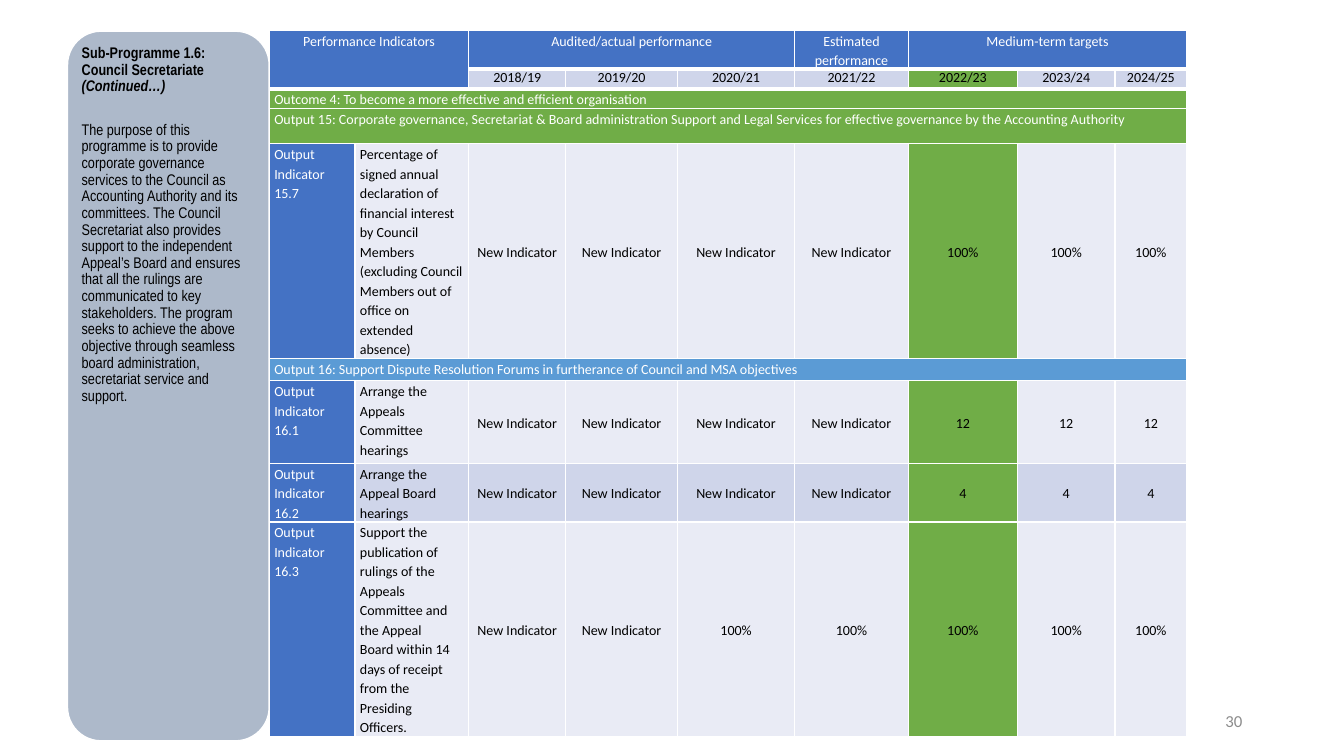
from dataclasses import dataclass

from lxml import etree
from pptx import Presentation
from pptx import util as u
from pptx.dml.color import RGBColor
from pptx.enum import shapes, text
from pptx.oxml.ns import qn

PX = 9144


@dataclass(frozen=True)
class Theme:
    white: str = "FFFFFF"
    black: str = "000000"
    grey: str = "8C8C8C"
    panel: str = "ADB9CA"
    blue: str = "4472C4"
    sky: str = "5B9BD5"
    green: str = "70AD47"
    light: str = "E9EBF5"
    band: str = "CFD5EA"
    table_font: str = "Calibri"
    panel_font: str = "Arial Narrow"
    table_size: int = 10
    panel_size: int = 11
    number_size: int = 12


THEME = Theme()


@dataclass(frozen=True)
class Heading:
    row: int
    column: int
    words: str
    fill: str
    across: int = 1
    down: int = 1
    centred: bool = False


@dataclass(frozen=True)
class Indicator:
    row: int
    number: str
    lines: tuple[str, ...]
    values: tuple[str, ...]
    fill: str = THEME.light


COLUMNS = (85, 113, 96, 111, 116, 113, 108, 97, 71)
ROWS = (35, 16, 17, 35, 109, 22, 82, 54, 72)
YEARS = ("2018/19", "2019/20", "2020/21", "2021/22", "2022/23", "2023/24", "2024/25")
FIRST_YEAR = 2
CURRENT_YEAR = "2022/23"
NEW = "New Indicator"

HEADINGS = (
    Heading(0, 0, "Performance Indicators", THEME.blue, 2, 2, True),
    Heading(0, 2, "Audited/actual performance", THEME.blue, 3, 1, True),
    Heading(0, 5, "Estimated performance", THEME.blue, 1, 1, True),
    Heading(0, 6, "Medium-term targets", THEME.blue, 3, 1, True),
    Heading(2, 0, "Outcome 4: To become a more effective and efficient organisation",
            THEME.green, 9),
    Heading(3, 0, "Output 15: Corporate governance, Secretariat & Board administration "
            "Support and Legal Services for effective governance by the Accounting Authority",
            THEME.green, 9),
    Heading(5, 0, "Output 16: Support Dispute Resolution Forums in furtherance of "
            "Council and MSA objectives", THEME.sky, 9),
)

INDICATORS = (
    Indicator(4, "15.7", (
        "Percentage of signed annual declaration of",
        "financial interest by Council Members (excluding Council Members out of",
        "office on extended absence)"), (NEW,) * 4 + ("100%",) * 3),
    Indicator(6, "16.1", ("Arrange the Appeals Committee hearings",),
              (NEW,) * 4 + ("12",) * 3),
    Indicator(7, "16.2", ("Arrange the Appeal Board", "hearings"),
              (NEW,) * 4 + ("4",) * 3, THEME.band),
    Indicator(8, "16.3", (
        "Support the publication of", "rulings of the Appeals",
        "Committee and the Appeal",
        "Board within 14 days of receipt from the Presiding", "Officers."),
        (NEW,) * 2 + ("100%",) * 5),
)

PURPOSE = (
    "The purpose of this programme is to provide corporate governance services to the "
    "Council as Accounting Authority and its committees. The Council Secretariat also "
    "provides support to the independent Appeal’s Board and ensures that all the rulings "
    "are communicated to key stakeholders. The program seeks to achieve the above "
    "objective through seamless board administration, secretariat service and support."
)


def add_span(para, words: str, *, font: str, size: int, colour: str,
             bold: bool = False, italic: bool = False) -> None:
    span = para.add_run()
    span.text = words
    span.font.name = font
    span.font.size = u.Pt(size)
    span.font.bold = bold
    span.font.italic = italic
    span.font.color.rgb = RGBColor.from_string(colour)


def write(frame, *lines: str, align=text.PP_ALIGN.LEFT, spacing: float = 1.0,
          **style) -> None:
    for index, line in enumerate(lines):
        para = frame.add_paragraph() if index else frame.paragraphs[0]
        para.alignment = align
        para.line_spacing = spacing
        para.space_before = para.space_after = u.Pt(0)
        add_span(para, line, **style)


def place(box, left: int, top: int, width: int, height: int) -> None:
    box.left, box.top = left * PX, top * PX
    box.width, box.height = width * PX, height * PX


def set_borders(cell, bottom: int) -> None:
    properties = cell._tc.get_or_add_tcPr()
    for side, points in (("L", 1), ("R", 1), ("T", 1), ("B", bottom)):
        line = etree.SubElement(properties, qn(f"a:ln{side}"), w=str(u.Pt(points)))
        fill = etree.SubElement(line, qn("a:solidFill"))
        etree.SubElement(fill, qn("a:srgbClr"), val=THEME.white)


def fill_cell(cell, *lines: str, fill: str, colour: str, centred: bool = False,
              middle: bool = False, spacing: float = 1.15) -> None:
    cell.fill.solid()
    cell.fill.fore_color.rgb = RGBColor.from_string(fill)
    cell.vertical_anchor = text.MSO_ANCHOR.MIDDLE if middle else text.MSO_ANCHOR.TOP
    write(cell.text_frame, *lines, spacing=spacing, font=THEME.table_font,
          size=THEME.table_size, colour=colour,
          align=text.PP_ALIGN.CENTER if centred else text.PP_ALIGN.LEFT)


def add_targets(page) -> None:
    box = page.shapes.add_table(len(ROWS), len(COLUMNS), 267 * PX, 30 * PX,
                                sum(COLUMNS) * PX, sum(ROWS) * PX)
    table = box.table
    table.first_row = table.horz_banding = False
    for column, width in zip(table.columns, COLUMNS):
        column.width = width * PX
    for index, (row, height) in enumerate(zip(table.rows, ROWS)):
        row.height = height * PX
        for cell in row.cells:
            cell.margin_left = cell.margin_right = 5 * PX
            cell.margin_top = cell.margin_bottom = 0
            set_borders(cell, 1 if index else 3)
    for item in HEADINGS:
        cell = table.cell(item.row, item.column)
        if item.across * item.down > 1:
            cell.merge(table.cell(item.row + item.down - 1,
                                  item.column + item.across - 1))
        fill_cell(cell, item.words, fill=item.fill, colour=THEME.white,
                  centred=item.centred)
    for column, year in enumerate(YEARS, FIRST_YEAR):
        current = year == CURRENT_YEAR
        fill_cell(table.cell(1, column), year, colour=THEME.black, centred=True,
                  fill=THEME.green if current else THEME.band, spacing=1.0)
        for item in INDICATORS:
            fill_cell(table.cell(item.row, column), item.values[column - FIRST_YEAR],
                      fill=THEME.green if current else item.fill,
                      colour=THEME.black, centred=True, middle=True)
    for item in INDICATORS:
        fill_cell(table.cell(item.row, 0), f"Output Indicator {item.number}",
                  fill=THEME.blue, colour=THEME.white)
        fill_cell(table.cell(item.row, 1), *item.lines, fill=item.fill,
                  colour=THEME.black)


def add_panel(page) -> None:
    panel = page.shapes.add_shape(shapes.MSO_SHAPE.ROUNDED_RECTANGLE,
                                  67 * PX, 31 * PX, 200 * PX, 704 * PX)
    panel.shadow.inherit = False
    panel.fill.solid()
    panel.fill.fore_color.rgb = RGBColor.from_string(THEME.panel)
    panel.line.color.rgb = RGBColor.from_string(THEME.white)
    panel.line.width = u.Pt(1)
    panel.element.getparent().insert(2, panel.element)

    title, body = page.shapes.title, page.placeholders[2]
    place(title, 76, 40, 180, 76)
    place(body, 76, 116, 180, 609)
    for box in (title, body):
        frame = box.text_frame
        frame.word_wrap = True
        frame.auto_size = text.MSO_AUTO_SIZE.NONE
        frame.vertical_anchor = text.MSO_ANCHOR.TOP
        frame.margin_left = frame.margin_right = 5 * PX
        frame.margin_top = frame.margin_bottom = 5 * PX
    style = dict(font=THEME.panel_font, size=THEME.panel_size, colour=THEME.black)
    write(title.text_frame, "Sub-Programme 1.6: Council Secretariate ",
          spacing=0.9, bold=True, **style)
    add_span(title.text_frame.paragraphs[0], "(Continued…)", bold=True, italic=True, **style)
    write(body.text_frame, PURPOSE, spacing=0.9, **style)


def add_page_number(page) -> None:
    box = page.shapes.add_textbox(942 * PX, 695 * PX, 300 * PX, 40 * PX)
    box.text_frame.word_wrap = True
    box.text_frame.vertical_anchor = text.MSO_ANCHOR.MIDDLE
    write(box.text_frame, "30", align=text.PP_ALIGN.RIGHT, font=THEME.table_font,
          size=THEME.number_size, colour=THEME.grey)


def main() -> None:
    deck = Presentation()
    deck.slide_width, deck.slide_height = 1333 * PX, 750 * PX
    page = deck.slides.add_slide(deck.slide_layouts.get_by_name("Content with Caption"))
    content = page.placeholders[1].element
    content.getparent().remove(content)
    add_panel(page)
    add_targets(page)
    add_page_number(page)
    deck.save("out.pptx")


if __name__ == "__main__":
    main()
